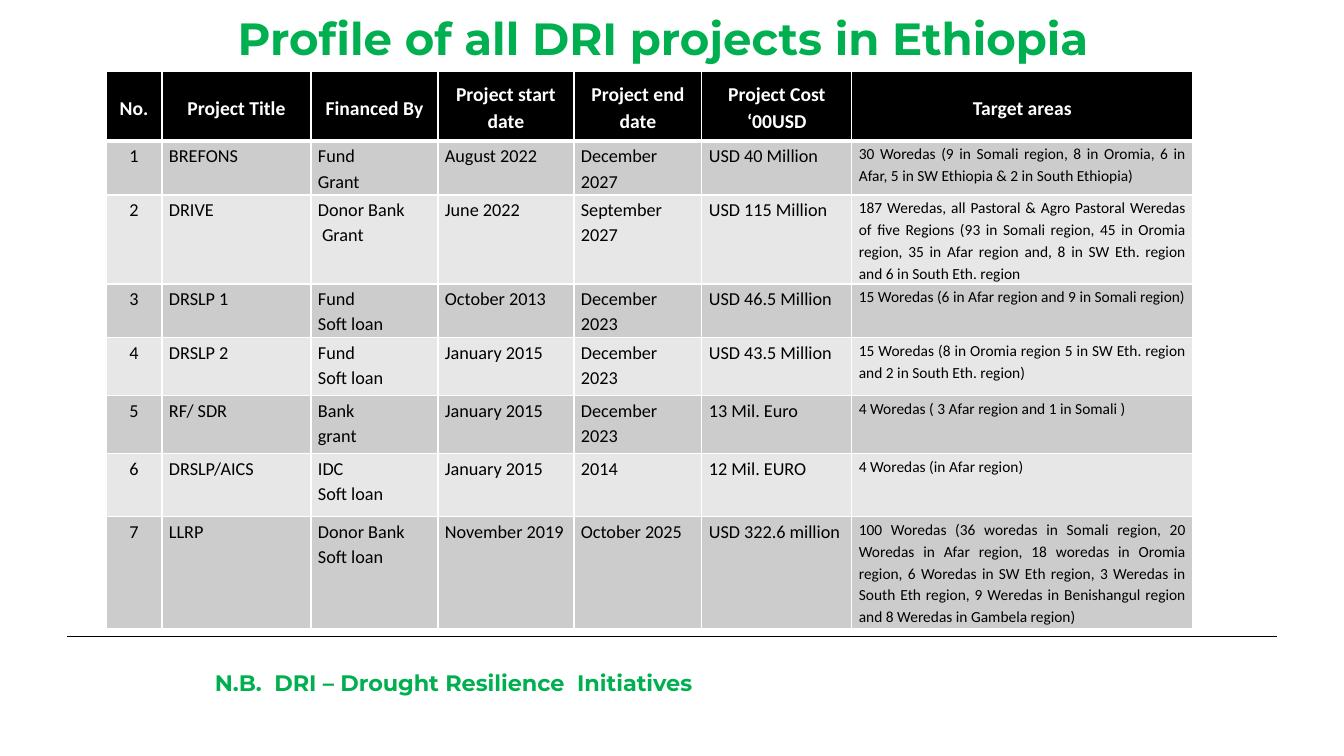
import pptx
import pptx.util
import pptx.dml.color
import pptx.enum.shapes
import pptx.enum.text
import pptx.oxml
import pptx.oxml.ns
import lxml.etree

PX = 914400 / 100.8
GREEN, BLACK, WHITE = "00B050", "000000", "FFFFFF"
BANDS = ["CCCCCC", "E7E7E7"]
ALIGN = pptx.enum.text.PP_ALIGN
ANCHOR = pptx.enum.text.MSO_ANCHOR


def px(*lengths):
    """Turn pixel lengths into a list of EMU lengths."""
    return [pptx.util.Emu(round(n * PX)) for n in lengths]


def style(tf, color, para, font):
    """Apply paragraph and font values to every paragraph of a text frame."""
    for p in tf.paragraphs:
        for key, value in para.items():
            setattr(p, key, value)
        for key, value in font.items():
            setattr(p.font, key, value)
        p.font.color.rgb = pptx.dml.color.RGBColor.from_string(color)


prs = pptx.Presentation()
prs.slide_width, prs.slide_height = px(1344, 756)
s = prs.slides.add_slide(prs.slide_layouts[5])

# Title
title = s.shapes.title
title.left, title.top, title.width, title.height = px(159, 21, 1008, 39)
tf = title.text_frame
tf.text = "Profile of all DRI projects in Ethiopia"
tf.word_wrap = True
tf.auto_size = pptx.enum.text.MSO_AUTO_SIZE.NONE
tf.vertical_anchor = ANCHOR.MIDDLE
style(tf, GREEN, {"alignment": ALIGN.CENTER, "line_spacing": 0.9},
      {"name": "Montserrat", "size": pptx.util.Pt(32.2), "bold": True})

# Rule above the note
rule = s.shapes.add_connector(pptx.enum.shapes.MSO_CONNECTOR.STRAIGHT, *px(67, 636, 1277, 636))
rule.line.color.rgb = pptx.dml.color.RGBColor.from_string(BLACK)
rule.line.width = pptx.util.Pt(0.25)
lxml.etree.SubElement(rule._element.spPr, pptx.oxml.ns.qn("a:effectLst"))

# Projects table
projects = [
    ["No.", "Project Title", "Financed By", "Project start date", "Project end date",
     "Project Cost ‘00USD", "Target areas"],
    ["1", "BREFONS", "Fund\nGrant", "August 2022", "December 2027", "USD 40 Million",
     "30 Woredas (9 in Somali region, 8 in Oromia, 6 in Afar, 5 in SW Ethiopia "
     "& 2 in South Ethiopia)"],
    ["2", "DRIVE", "Donor Bank\n Grant", "June 2022", "September 2027", "USD 115 Million",
     "187 Weredas, all Pastoral & Agro Pastoral Weredas of five Regions (93 in Somali region, "
     "45 in Oromia region, 35 in Afar region and, 8 in SW Eth. region and 6 in South Eth. region"],
    ["3", "DRSLP 1", "Fund\nSoft loan", "October 2013", "December 2023", "USD 46.5 Million",
     "15 Woredas (6 in Afar region and 9 in Somali region)"],
    ["4", "DRSLP 2", "Fund\nSoft loan", "January 2015", "December 2023", "USD 43.5 Million",
     "15 Woredas (8 in Oromia region 5 in SW Eth. region and 2 in South Eth. region)"],
    ["5", "RF/ SDR", "Bank\ngrant", "January 2015", "December 2023", "13 Mil. Euro",
     "4 Woredas ( 3 Afar region and 1 in Somali )"],
    ["6", "DRSLP/AICS", "IDC\nSoft loan", "January 2015", "2014", "12 Mil. EURO",
     "4 Woredas (in Afar region)"],
    ["7", "LLRP", "Donor Bank\nSoft loan", "November 2019", "October 2025", "USD 322.6 million",
     "100 Woredas (36 woredas in Somali region, 20 Woredas in Afar region, 18 woredas in Oromia "
     "region, 6 Woredas in SW Eth region, 3 Weredas in South Eth region, 9 Weredas in "
     "Benishangul region and 8 Weredas in Gambela region)"],
]
col_widths = [56, 149, 127, 136, 128, 150, 341]
row_heights = [70, 54, 89, 54, 58, 58, 63, 112]
table = s.shapes.add_table(len(projects), len(col_widths),
                           *px(106, 71, sum(col_widths), sum(row_heights))).table
table.horz_banding = False
for column, width in zip(table.columns, px(*col_widths)):
    column.width = width
for row, height in zip(table.rows, px(*row_heights)):
    row.height = height

for i, project in enumerate(projects):
    header = i == 0
    for j, text in enumerate(project):
        cell = table.cell(i, j)
        cell.text = text
        cell.margin_left, cell.margin_right, cell.margin_top, cell.margin_bottom = px(7, 7, 1, 0)
        cell.vertical_anchor = ANCHOR.MIDDLE if header else ANCHOR.TOP
        tcPr = cell._tc.get_or_add_tcPr()
        for side in "LRTB":
            points = 3 if (i, side) in [(0, "B"), (1, "T")] else 1
            tcPr.append(pptx.oxml.parse_xml(
                f'<a:ln{side} {pptx.oxml.ns.nsdecls("a")} w="{points * 12700}"><a:solidFill>'
                f'<a:srgbClr val="{WHITE}"/></a:solidFill></a:ln{side}>'))
        cell.fill.solid()
        fill = BLACK if header else BANDS[(i - 1) % 2]
        cell.fill.fore_color.rgb = pptx.dml.color.RGBColor.from_string(fill)
        centred = header or j == 0
        size = 14 if header else 11 if j == len(project) - 1 else 13
        style(cell.text_frame, WHITE if header else BLACK,
              {"alignment": ALIGN.CENTER if centred else ALIGN.JUSTIFY, "line_spacing": 1.15},
              {"name": "Calibri", "size": pptx.util.Pt(size), "bold": header})

# Note
note = s.shapes.add_textbox(*px(205, 664, 539, 37))
tf = note.text_frame
tf.text = "N.B.  DRI – Drought Resilience  Initiatives"
tf.word_wrap = False
style(tf, GREEN, {"alignment": ALIGN.LEFT},
      {"name": "Montserrat", "size": pptx.util.Pt(16), "bold": True})

prs.save("out.pptx")
